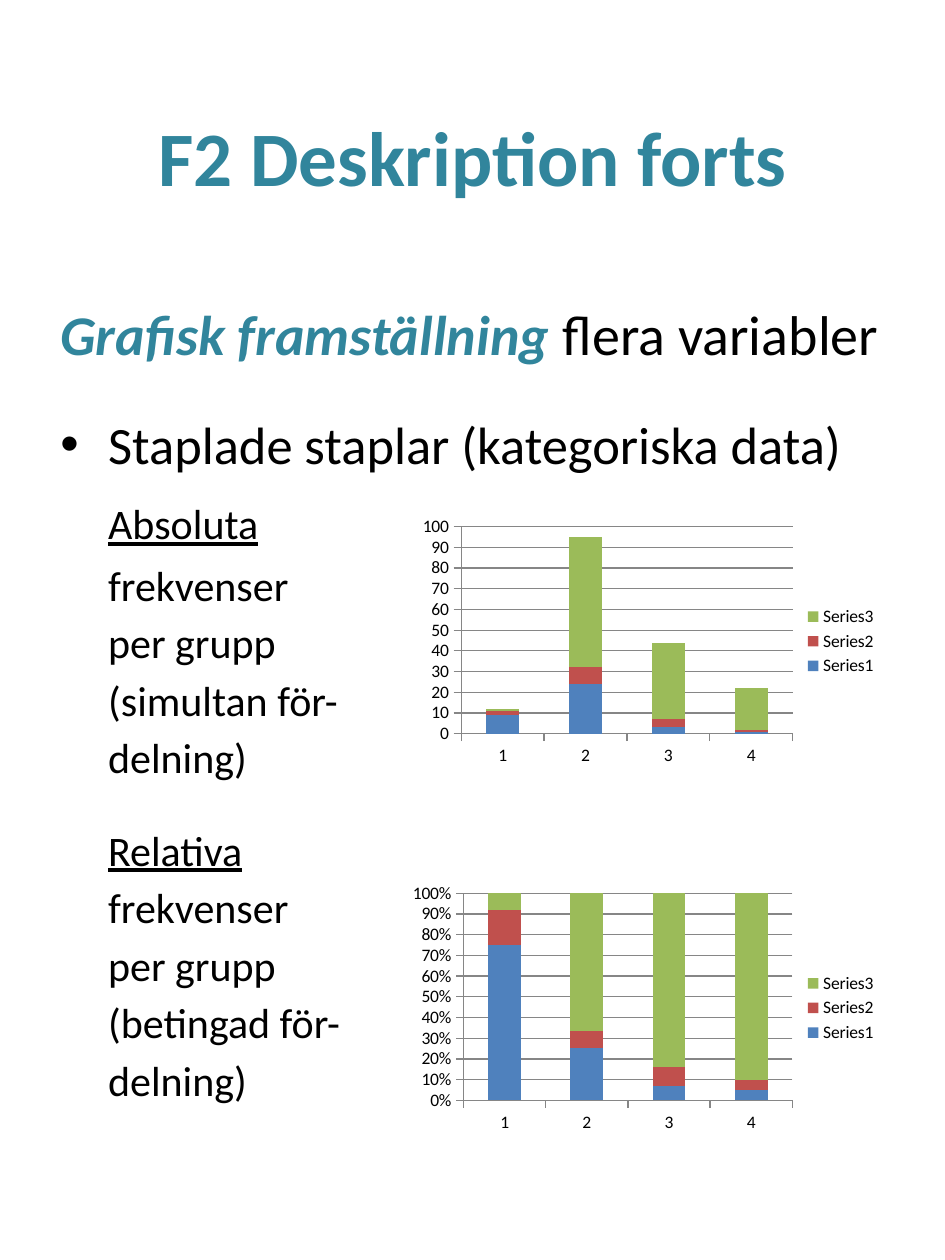
from dataclasses import dataclass

from lxml import etree
from pptx import Presentation, util as u
from pptx.chart.data import CategoryChartData
from pptx.dml.color import RGBColor
from pptx.enum import chart as ch, text
from pptx.oxml.ns import qn

COLOURS = {
    "heading": "31859C",
    "text": "000000",
    "axis": "868686",
    "Series1": "4F81BD",
    "Series2": "C0504D",
    "Series3": "9BBB59",
}
FONT = "Calibri"
INDENT = 0.38


@dataclass(frozen=True)
class Span:
    words: str
    size: float
    colour: str = "text"
    bold: bool = False
    italic: bool = False
    underline: bool = False


@dataclass(frozen=True)
class Line:
    spans: tuple[Span, ...]
    before: float = 0
    indent: float = INDENT
    bullet: str = ""


@dataclass(frozen=True)
class StackedChart:
    kind: ch.XL_CHART_TYPE
    left: float
    top: float
    width: float
    number_format: str
    values: tuple[tuple[int, ...], ...]


def frequency_lines(kind: str, distribution: str, before: float, after: float) -> list[Line]:
    """An underlined kind of frequency and the four lines that explain it."""
    rest = ("frekvenser", "per grupp", f"({distribution} för-", "delning)")
    return [Line((Span(kind, 24, underline=True),), before)] + [
        Line((Span(words, 24),), 4.1 if i else after) for i, words in enumerate(rest)
    ]


TITLE = [Line((Span("F2 Deskription forts", 44, "heading", bold=True),), indent=0)]
BODY = [
    Line(
        (
            Span("Grafisk framställning ", 32, "heading", bold=True, italic=True),
            Span("flera variabler", 32),
        ),
        indent=0,
    ),
    Line((Span("Staplade staplar (kategoriska data)", 30),), 25.7, bullet="•"),
    *frequency_lines("Absoluta", "simultan", 13.1, 6.2),
    *frequency_lines("Relativa", "betingad", 24, 4.1),
]
CHARTS = [
    StackedChart(
        ch.XL_CHART_TYPE.COLUMN_STACKED, 3.28, 4.06, 3.78, "General",
        ((9, 24, 3, 1), (2, 8, 4, 1), (1, 63, 37, 20)),
    ),
    StackedChart(
        ch.XL_CHART_TYPE.COLUMN_STACKED_100, 3.2, 6.97, 3.86, "0%",
        ((75, 25, 7, 5), (17, 8, 9, 5), (8, 66, 84, 91)),
    ),
]


def rgb(name: str) -> RGBColor:
    return RGBColor.from_string(COLOURS[name])


def set_format(target, values: dict) -> None:
    for name, value in values.items():
        setattr(target, name, value)


def add_text(page, lines: list[Line], top: float, height: float,
             anchor=text.MSO_ANCHOR.TOP, align=text.PP_ALIGN.LEFT) -> None:
    box = page.shapes.add_textbox(u.Inches(0.38), u.Inches(top), u.Inches(6.75), u.Inches(height))
    frame = box.text_frame
    set_format(frame, {"word_wrap": True, "vertical_anchor": anchor})
    for i, line in enumerate(lines):
        para = frame.add_paragraph() if i else frame.paragraphs[0]
        set_format(para, {"alignment": align, "space_before": u.Pt(line.before)})
        properties = para._p.get_or_add_pPr()
        properties.set("marL", str(u.Inches(line.indent)))
        if line.bullet:
            properties.set("indent", str(u.Inches(-line.indent)))
            etree.SubElement(properties, qn("a:buFont"), typeface="Arial")
            etree.SubElement(properties, qn("a:buChar"), char=line.bullet)
        for span in line.spans:
            run = para.add_run()
            run.text = span.words
            set_format(run.font, {
                "name": FONT, "size": u.Pt(span.size), "bold": span.bold,
                "italic": span.italic, "underline": span.underline,
            })
            run.font.color.rgb = rgb(span.colour)


def add_stacked_chart(page, item: StackedChart) -> None:
    data = CategoryChartData()
    data.categories = ["1", "2", "3", "4"]
    for number, values in enumerate(item.values, 1):
        data.add_series(f"Series{number}", values)
    chart = page.shapes.add_chart(
        item.kind, u.Inches(item.left), u.Inches(item.top),
        u.Inches(item.width), u.Inches(2.06), data,
    ).chart
    set_format(chart, {"has_title": False, "has_legend": True})
    set_format(chart.font, {"name": FONT, "size": u.Pt(10)})
    chart.font.color.rgb = rgb("text")
    set_format(chart.legend, {"position": ch.XL_LEGEND_POSITION.RIGHT, "include_in_layout": False})

    plot = chart.plots[0]
    set_format(plot, {"gap_width": 150, "overlap": 100, "vary_by_categories": False})
    for series in plot.series:
        series.format.fill.solid()
        series.format.fill.fore_color.rgb = rgb(series.name)

    value_axis = chart.value_axis
    value_axis.has_major_gridlines = True
    set_format(value_axis.tick_labels, {
        "number_format": item.number_format, "number_format_is_linked": False,
    })
    for axis in (chart.category_axis, value_axis):
        axis.major_tick_mark = ch.XL_TICK_MARK.OUTSIDE
    for part in (chart.category_axis, value_axis, value_axis.major_gridlines):
        part.format.line.color.rgb = rgb("axis")
        part.format.line.width = u.Pt(0.75)


def main() -> None:
    deck = Presentation()
    set_format(deck, {"slide_width": u.Inches(7.5), "slide_height": u.Inches(10)})
    page = deck.slides.add_slide(deck.slide_layouts[6])
    add_text(page, TITLE, 0.4, 1.67, text.MSO_ANCHOR.MIDDLE, text.PP_ALIGN.CENTER)
    add_text(page, BODY, 2.33, 7.18)
    for item in CHARTS:
        add_stacked_chart(page, item)
    deck.save("out.pptx")


if __name__ == "__main__":
    main()
